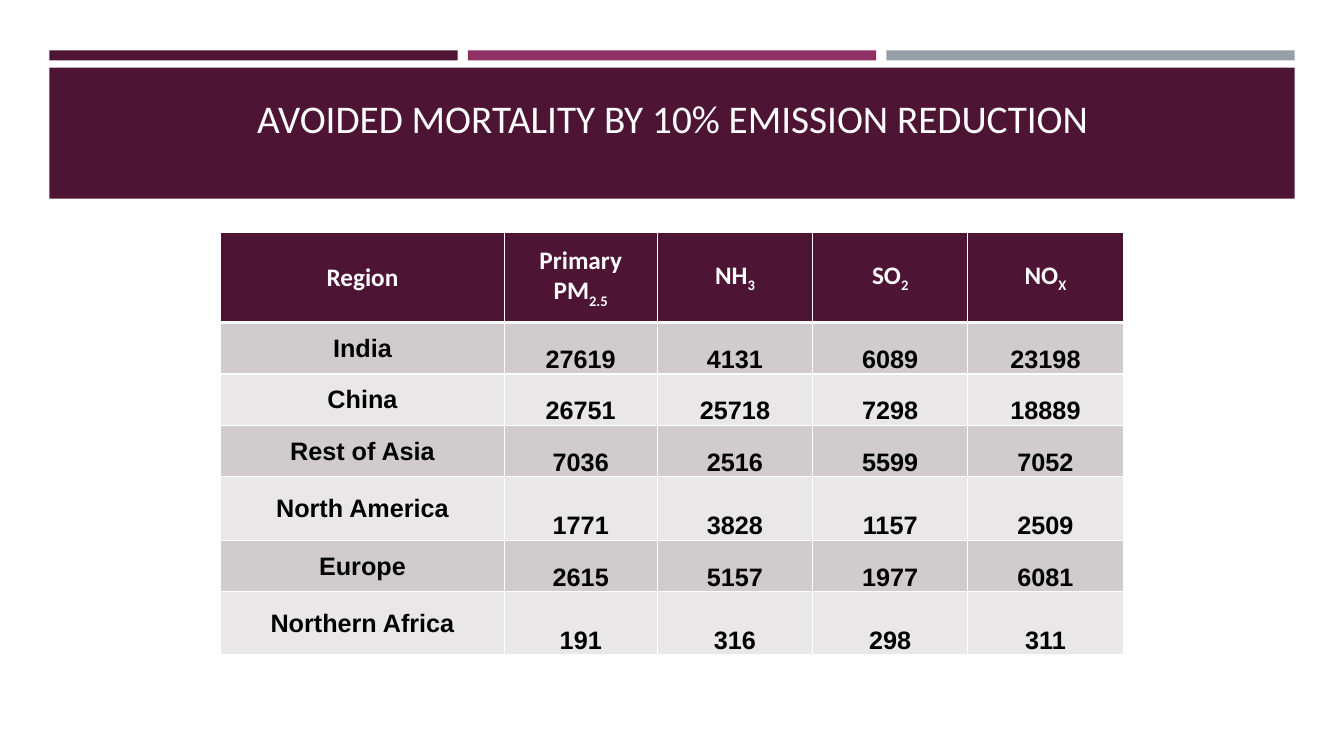
"""Build a slide with a table of avoided mortality by region and pollutant."""
from lxml import etree
from pptx import Presentation
from pptx import util as u
from pptx.dml import color
from pptx.enum import shapes, text
from pptx.oxml import ns

TITLE = "AVOIDED MORTALITY BY 10% EMISSION REDUCTION"
HEADINGS = [("Region", ""), ("Primary PM", "2.5"), ("NH", "3"), ("SO", "2"), ("NO", "X")]
REGIONS = [
    ("India", 27619, 4131, 6089, 23198),
    ("China", 26751, 25718, 7298, 18889),
    ("Rest of Asia", 7036, 2516, 5599, 7052),
    ("North America", 1771, 3828, 1157, 2509),
    ("Europe", 2615, 5157, 1977, 6081),
    ("Northern Africa", 191, 316, 298, 311),
]
PLUM, WHITE, BLACK = "4D1434", "FFFFFF", "000000"
STRIPES = [PLUM, "903163", "969FA7"]
ROW_FILLS = ["D0CCCE", "E9E7E8"]
WIDTH, HEIGHT = 13.33, 7.5
MARGIN, STRIPE_GAP = 0.49, 0.1
COLUMNS = [2.81, 1.52, 1.54, 1.54, 1.54]
ROWS = [0.89, 0.51, 0.51, 0.51, 0.63, 0.51, 0.63]
TABLE_TOP = 2.31


def rgb(value):
    return color.RGBColor.from_string(value)


def box(*lengths):
    return [u.Inches(length) for length in lengths]


def add_bar(slide, place, fill):
    shape = slide.shapes.add_shape(shapes.MSO_SHAPE.RECTANGLE, *box(*place))
    shape.shadow.inherit = False
    shape.fill.solid()
    shape.fill.fore_color.rgb = rgb(fill)
    shape.line.fill.background()


def add_run(paragraph, words, size, font, ink, bold=False, baseline=0):
    run = paragraph.add_run()
    run.text = words
    run.font.size, run.font.name, run.font.bold = u.Pt(size), font, bold
    run.font.color.rgb = rgb(ink)
    if baseline:
        run.font._element.set("baseline", str(baseline))


def add_borders(cell, bottom):
    properties = cell._tc.get_or_add_tcPr()
    for side, points in (("L", 1), ("R", 1), ("T", 1), ("B", bottom)):
        line = etree.SubElement(properties, ns.qn(f"a:ln{side}"), w=str(u.Pt(points)))
        fill = etree.SubElement(line, ns.qn("a:solidFill"))
        etree.SubElement(fill, ns.qn("a:srgbClr"), val=WHITE)


def style_cell(cell, fill, anchor, bottom_border=1):
    add_borders(cell, bottom_border)
    cell.fill.solid()
    cell.fill.fore_color.rgb = rgb(fill)
    cell.vertical_anchor = anchor
    paragraph = cell.text_frame.paragraphs[0]
    paragraph.alignment = text.PP_ALIGN.CENTER
    return paragraph


def add_title(slide):
    title = slide.shapes.add_textbox(*box(0.64, 0.77, 12.06, 1.11))
    frame = title.text_frame
    frame.word_wrap = True
    frame.vertical_anchor = text.MSO_ANCHOR.BOTTOM
    frame.margin_bottom = u.Inches(0.48)
    paragraph = frame.paragraphs[0]
    paragraph.alignment = text.PP_ALIGN.CENTER
    add_run(paragraph, TITLE, 28, "Calibri", WHITE)


def add_mortality_table(slide):
    width = sum(COLUMNS)
    place = box((WIDTH - width) / 2, TABLE_TOP, width, sum(ROWS))
    table = slide.shapes.add_table(len(ROWS), len(COLUMNS), *place).table
    for column, length in zip(table.columns, COLUMNS):
        column.width = u.Inches(length)
    for row, length in zip(table.rows, ROWS):
        row.height = u.Inches(length)
    for column, (name, subscript) in enumerate(HEADINGS):
        paragraph = style_cell(table.cell(0, column), PLUM, text.MSO_ANCHOR.MIDDLE, 3)
        add_run(paragraph, name, 18, "Calibri", WHITE, True)
        if subscript:
            add_run(paragraph, subscript, 18, "Calibri", WHITE, True, -25000)
    for row, values in enumerate(REGIONS, 1):
        for column, value in enumerate(values):
            cell = table.cell(row, column)
            anchor = text.MSO_ANCHOR.BOTTOM if column else text.MSO_ANCHOR.MIDDLE
            paragraph = style_cell(cell, ROW_FILLS[(row - 1) % 2], anchor)
            cell.margin_left = cell.margin_right = cell.margin_top = u.Inches(0.01)
            cell.margin_bottom = 0
            add_run(paragraph, str(value), 18, "Arial", BLACK, True)


def main():
    presentation = Presentation()
    presentation.slide_width, presentation.slide_height = box(WIDTH, HEIGHT)
    slide = presentation.slides.add_slide(presentation.slide_layouts[6])
    band = WIDTH - 2 * MARGIN
    stripe = (band - 2 * STRIPE_GAP) / 3
    for index, fill in enumerate(STRIPES):
        add_bar(slide, (MARGIN + index * (stripe + STRIPE_GAP), 0.5, stripe, 0.1), fill)
    add_bar(slide, (MARGIN, 0.67, band, 1.3), PLUM)
    add_title(slide)
    add_mortality_table(slide)
    presentation.save("out.pptx")


if __name__ == "__main__":
    main()
